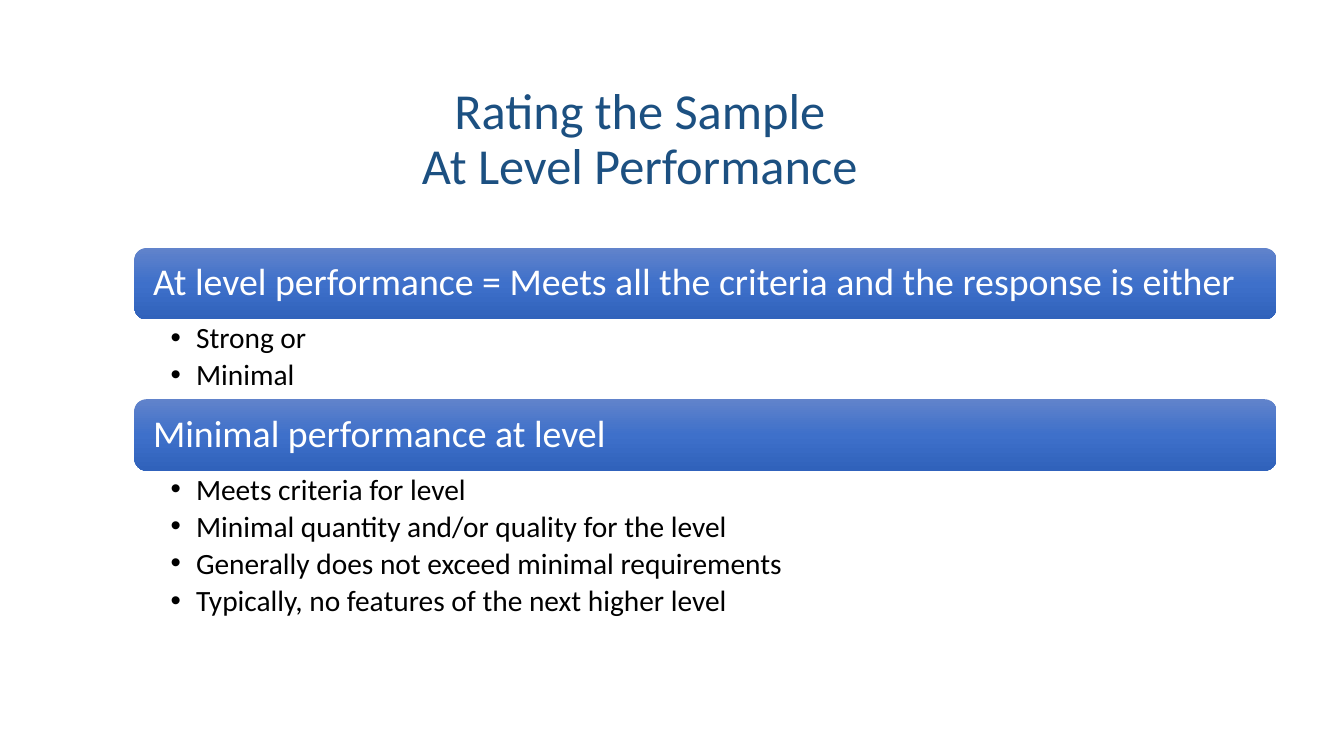
"""Build the slide on rating a sample for at-level performance."""
from dataclasses import dataclass

from lxml import etree
from pptx import Presentation
from pptx.dml.color import RGBColor
from pptx.enum.shapes import MSO_SHAPE
from pptx.enum.text import MSO_ANCHOR, MSO_AUTO_SIZE, PP_ALIGN
from pptx.oxml.ns import qn
from pptx.util import Cm, Pt

ROUNDED = MSO_SHAPE.ROUNDED_RECTANGLE
TOP, MIDDLE = MSO_ANCHOR.TOP, MSO_ANCHOR.MIDDLE
LEFT, CENTER = PP_ALIGN.LEFT, PP_ALIGN.CENTER
NO_FIT = MSO_AUTO_SIZE.NONE
TWO_CONTENT_LAYOUT = 3

SECTIONS = [
    ("At level performance = Meets all the criteria and the response is either", 2.01,
     ["Strong or", "Minimal"]),
    ("Minimal performance at level", 4.04,
     ["Meets criteria for level",
      "Minimal quantity and/or quality for the level",
      "Generally does not exceed minimal requirements",
      "Typically, no features of the next higher level"]),
]
SECTION_LEFT, SECTION_TOP = 3.39, 6.25
SECTION_WIDTH, BAND_HEIGHT = 28.78, 1.8


@dataclass(frozen=True)
class Theme:
    font: str = "Calibri"
    title_color: str = "1C5081"
    band_text: str = "FFFFFF"
    list_text: str = "000000"
    band_stops: tuple = ((0, "6183CB"), (50, "3E70CA"), (100, "3062BB"))
    title_size: float = 36
    band_size: float = 27
    list_size: float = 21


def write(para, text, *, font, size, color, align=LEFT, after=0):
    para.text = text
    para.alignment = align
    para.line_spacing = 0.9
    para.space_before = Pt(0)
    para.space_after = Pt(after)
    for span in para.runs:
        span.font.name = font
        span.font.size = Pt(size)
        span.font.color.rgb = RGBColor.from_string(color)


def add_bullet(para):
    para.level = 1
    properties = para._p.get_or_add_pPr()
    properties.set("marL", str(Cm(0.64)))
    properties.set("indent", str(-Cm(0.64)))
    etree.SubElement(properties, qn("a:buFont"), typeface="Arial")
    etree.SubElement(properties, qn("a:buChar"), char="•")


def fill_gradient(shape, stops):
    shape.fill.gradient()
    shape.fill.gradient_angle = 270
    stop_list = shape._element.spPr.find(qn("a:gradFill")).find(qn("a:gsLst"))
    for stop in list(stop_list):
        stop_list.remove(stop)
    for percent, color in stops:
        stop = etree.SubElement(stop_list, qn("a:gs"), pos=str(percent * 1000))
        etree.SubElement(stop, qn("a:srgbClr"), val=color)


class SlideBuilder:
    def __init__(self, page, theme):
        self.page = page
        self.theme = theme

    def place(self, box, left, top, width, height):
        box.left, box.top, box.width, box.height = map(Cm, (left, top, width, height))

    def frame(self, box, anchor, insets):
        frame = box.text_frame
        frame.word_wrap = True
        frame.auto_size = NO_FIT
        frame.vertical_anchor = anchor
        (frame.margin_left, frame.margin_top,
         frame.margin_right, frame.margin_bottom) = map(Cm, insets)
        return frame

    def title(self, text, *bounds):
        box = self.page.shapes.title
        self.place(box, *bounds)
        frame = self.frame(box, MIDDLE, (0.25, 1.27, 0.25, 0.13))
        write(frame.paragraphs[0], text, font=self.theme.font, size=self.theme.title_size,
              color=self.theme.title_color, align=CENTER)

    def band(self, text, *bounds):
        box = self.page.shapes.add_shape(ROUNDED, *map(Cm, bounds))
        box.shadow.inherit = False
        box.line.fill.background()
        fill_gradient(box, self.theme.band_stops)
        frame = self.frame(box, MIDDLE, (0.38, 0.28, 0.38, 0.28))
        write(frame.paragraphs[0], text, font=self.theme.font, size=self.theme.band_size,
              color=self.theme.band_text)

    def bullets(self, box, items, *bounds):
        self.place(box, *bounds)
        frame = self.frame(box, TOP, (0.91, 0.1, 0.53, 0.1))
        for index, item in enumerate(items):
            para = frame.add_paragraph() if index else frame.paragraphs[0]
            write(para, item, font=self.theme.font, size=self.theme.list_size,
                  color=self.theme.list_text, after=3.8)
            add_bullet(para)


def main():
    deck = Presentation()
    deck.slide_width, deck.slide_height = Cm(33.87), Cm(19.05)
    page = deck.slides.add_slide(deck.slide_layouts[TWO_CONTENT_LAYOUT])
    builder = SlideBuilder(page, Theme())
    builder.title("Rating the Sample\vAt Level Performance", 1.7, 0.94, 28.85, 4.06)
    bodies = [box for box in page.placeholders if box.placeholder_format.idx in (1, 2)]
    top = SECTION_TOP
    for body, (heading, list_height, items) in zip(bodies, SECTIONS):
        builder.band(heading, SECTION_LEFT, top, SECTION_WIDTH, BAND_HEIGHT)
        top += BAND_HEIGHT
        builder.bullets(body, items, SECTION_LEFT, top, SECTION_WIDTH, list_height)
        top += list_height
    for box in list(page.placeholders):
        if not box.text_frame.text:
            box._element.getparent().remove(box._element)
    deck.save("out.pptx")


if __name__ == "__main__":
    main()
